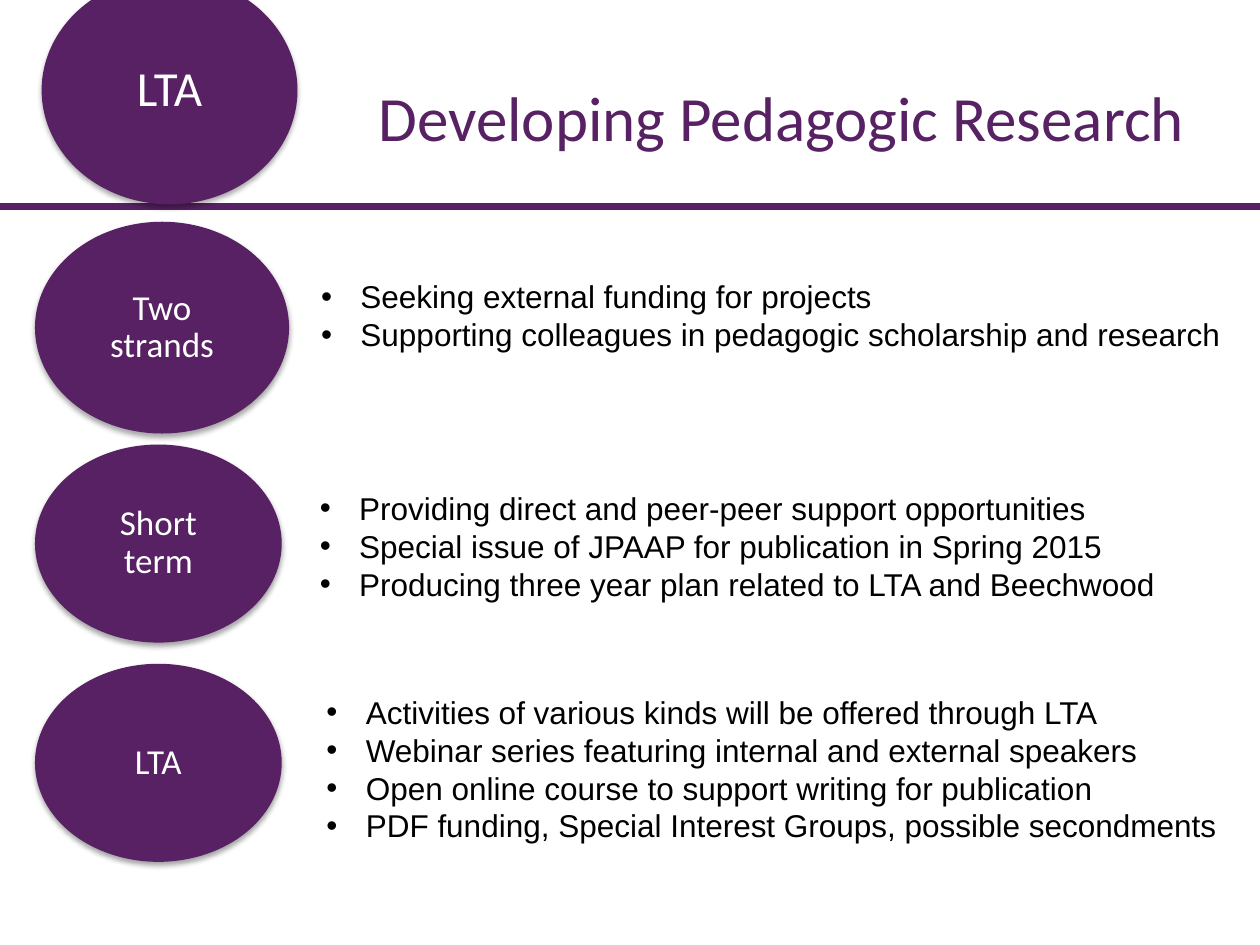
from lxml import etree
from pptx import Presentation
from pptx.dml.color import RGBColor
from pptx.enum.shapes import MSO_CONNECTOR, MSO_SHAPE
from pptx.enum.text import MSO_ANCHOR, PP_ALIGN
from pptx.oxml.ns import qn
from pptx.util import Pt

COLORS = {"purple": "572163", "white": "FFFFFF", "black": "000000"}


def set_font(paragraph, name, size, color):
    paragraph.font.name = name
    paragraph.font.size = Pt(size)
    paragraph.font.color.rgb = RGBColor.from_string(COLORS[color])


def add_effects(shape, with_shadow):
    effects = etree.SubElement(shape._element.spPr, qn("a:effectLst"))
    if with_shadow:
        shadow = etree.SubElement(
            effects, qn("a:outerShdw"), blurRad=str(Pt(3.1)), dist=str(Pt(1.8)),
            dir="5400000", rotWithShape="0")
        color = etree.SubElement(shadow, qn("a:srgbClr"), val=COLORS["black"])
        etree.SubElement(color, qn("a:alpha"), val="35000")


presentation = Presentation()
presentation.slide_width, presentation.slide_height = Pt(720), Pt(540)
slide = presentation.slides.add_slide(presentation.slide_layouts[5])

# Title
title = slide.shapes.title
title.left, title.top, title.width, title.height = Pt(170), Pt(21.6), Pt(514), Pt(90)
title.text_frame.text = "Developing Pedagogic Research"
title.text_frame.vertical_anchor = MSO_ANCHOR.MIDDLE
title_paragraph = title.text_frame.paragraphs[0]
title_paragraph.alignment = PP_ALIGN.RIGHT
set_font(title_paragraph, "Calibri", 36, "purple")

# Rule under the title
rule = slide.shapes.add_connector(
    MSO_CONNECTOR.STRAIGHT, Pt(0), Pt(118), Pt(720), Pt(118))
rule.line.color.rgb = RGBColor.from_string(COLORS["purple"])
rule.line.width = Pt(3.5)
add_effects(rule, with_shadow=False)

# Labelled circles: text, left, top, width, height, font size
circles = [
    ("LTA", 23.8, -13.6, 146.2, 130.4, 28),
    ("Two strands", 20, 126.7, 145.2, 121, 20),
    ("Short term", 20, 254, 141, 113.2, 20),
    ("LTA", 20, 379.3, 141, 113.2, 20),
]
for label, left, top, width, height, size in circles:
    circle = slide.shapes.add_shape(
        MSO_SHAPE.OVAL, Pt(left), Pt(top), Pt(width), Pt(height))
    circle.fill.solid()
    circle.fill.fore_color.rgb = RGBColor.from_string(COLORS["purple"])
    circle.line.fill.background()
    add_effects(circle, with_shadow=True)
    frame = circle.text_frame
    frame.word_wrap = True
    frame.vertical_anchor = MSO_ANCHOR.MIDDLE
    frame.margin_left = frame.margin_right = Pt(13.7)
    frame.margin_top = frame.margin_bottom = Pt(6.5)
    frame.text = label
    paragraph = frame.paragraphs[0]
    paragraph.alignment = PP_ALIGN.CENTER
    paragraph.line_spacing = 0.9
    set_font(paragraph, "Calibri", size, "white")

# Bullet lists: left, top, width, items
bullet_lists = [
    (176.4, 155, 530, [
        "Seeking external funding for projects",
        "Supporting colleagues in pedagogic scholarship and research",
    ]),
    (175.7, 276, 537, [
        "Providing direct and peer-peer support opportunities",
        "Special issue of JPAAP for publication in Spring 2015",
        "Producing three year plan related to LTA and Beechwood",
    ]),
    (179.5, 392.5, 526, [
        "Activities of various kinds will be offered through LTA",
        "Webinar series featuring internal and external speakers",
        "Open online course to support writing for publication",
        "PDF funding, Special Interest Groups, possible secondments",
    ]),
]
for left, top, width, items in bullet_lists:
    height = 7.2 + 21.6 * len(items)
    box = slide.shapes.add_textbox(Pt(left), Pt(top), Pt(width), Pt(height))
    frame = box.text_frame
    frame.word_wrap = True
    for index, item in enumerate(items):
        paragraph = frame.add_paragraph() if index else frame.paragraphs[0]
        paragraph.text = item
        properties = paragraph._p.get_or_add_pPr()
        properties.set("marL", str(Pt(22.5)))
        properties.set("indent", str(Pt(-22.5)))
        etree.SubElement(properties, qn("a:buFont"), typeface="Arial")
        etree.SubElement(properties, qn("a:buChar"), char="•")
        set_font(paragraph, "Arial", 18, "black")

presentation.save("out.pptx")
